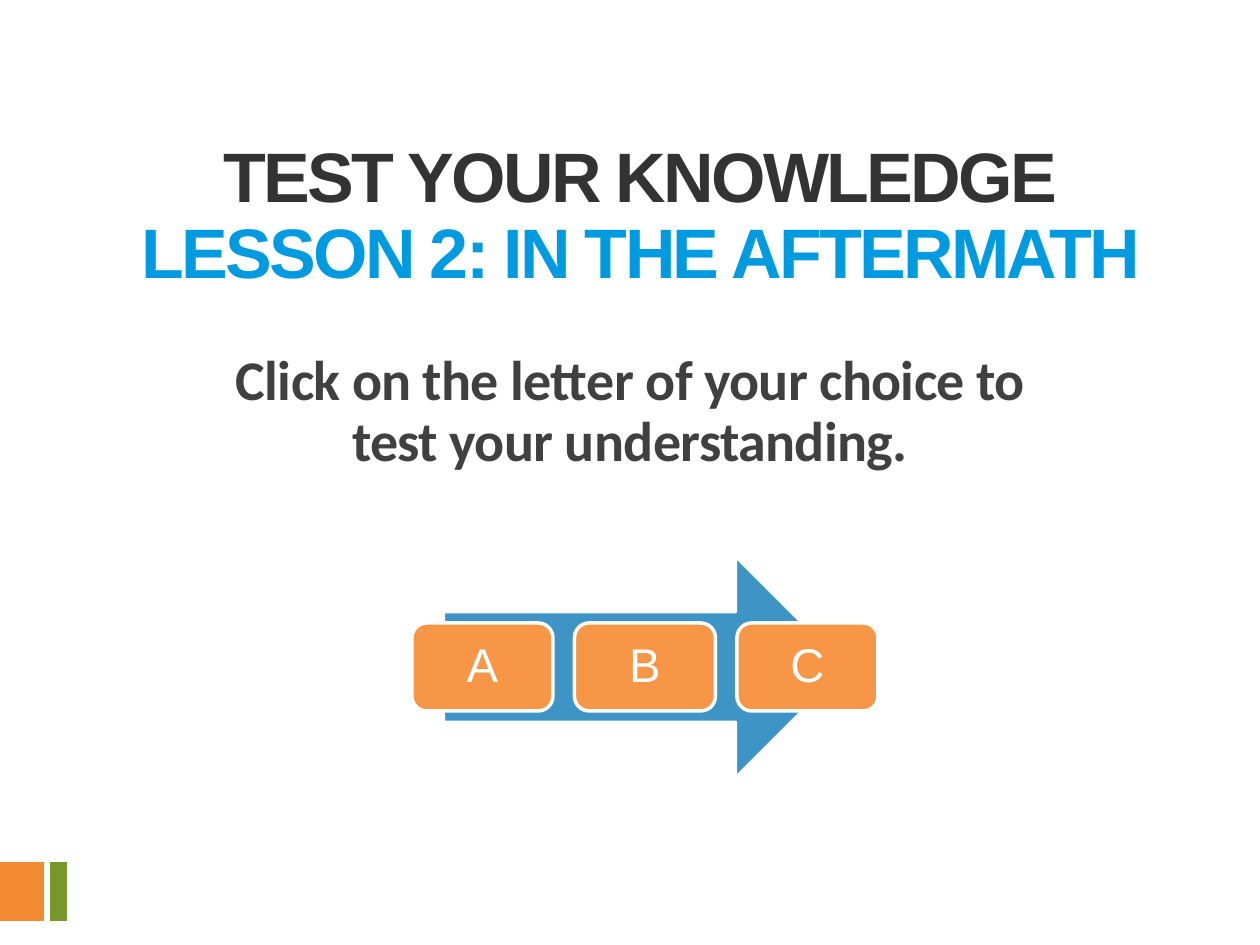
import pptx
import pptx.util
import pptx.dml.color
import pptx.enum.shapes
import pptx.enum.text

RGBColor = pptx.dml.color.RGBColor
Shape = pptx.enum.shapes.MSO_SHAPE
Anchor = pptx.enum.text.MSO_ANCHOR

EMU_PER_PX = 914400 / 126

WHITE = RGBColor(0xFF, 0xFF, 0xFF)
ORANGE = RGBColor(0xF3, 0x8A, 0x31)
GREEN = RGBColor(0x77, 0x97, 0x2B)
CHARCOAL = RGBColor(0x33, 0x33, 0x33)
GRAY = RGBColor(0x40, 0x40, 0x40)
BRIGHT_BLUE = RGBColor(0x00, 0x9A, 0xE1)
ARROW_BLUE = RGBColor(0x3E, 0x94, 0xC4)
BUTTON_ORANGE = RGBColor(0xF7, 0x96, 0x46)


def px(length):
    return pptx.util.Emu(round(length * EMU_PER_PX))


def place(shape, box):
    shape.left, shape.top, shape.width, shape.height = map(px, box)


def write_text(shape, lines, size, font="Arial", bold=False, spacing=0,
               anchor=Anchor.TOP):
    """Write (text, colour) lines as one centred paragraph with line breaks."""
    frame = shape.text_frame
    frame.word_wrap = True
    frame.auto_size = pptx.enum.text.MSO_AUTO_SIZE.NONE
    frame.vertical_anchor = anchor
    paragraph = frame.paragraphs[0]
    paragraph.alignment = pptx.enum.text.PP_ALIGN.CENTER
    paragraph.line_spacing = 0.9
    for index, (text, color) in enumerate(lines):
        if index:
            paragraph.add_line_break()
        run = paragraph.add_run()
        run.text = text
        run.font.name = font
        run.font.size = pptx.util.Pt(size)
        run.font.bold = bold
        run.font.color.rgb = color
        if spacing:
            run._r.get_or_add_rPr().set("spc", str(round(spacing * 100)))


def add_filled(shapes, kind, box, fill, line_width=0):
    shape = shapes.add_shape(kind, *map(px, box))
    shape.shadow.inherit = False
    shape.fill.solid()
    shape.fill.fore_color.rgb = fill
    if line_width:
        shape.line.color.rgb = WHITE
        shape.line.width = pptx.util.Pt(line_width)
    else:
        shape.line.fill.background()
    return shape


def add_corner_bars(slide, box):
    left, top, width, height = box
    green_width = 17
    orange_width = width - green_width - 6
    add_filled(slide.shapes, Shape.RECTANGLE,
               (left, top, orange_width, height), ORANGE)
    add_filled(slide.shapes, Shape.RECTANGLE,
               (left + width - green_width, top, green_width, height), GREEN)


def add_title(slide, box):
    title = slide.shapes.title
    place(title, box)
    write_text(title, [("TEST YOUR KNOWLEDGE", CHARCOAL),
                       ("LESSON 2: IN THE AFTERMATH", BRIGHT_BLUE)],
               size=40, bold=True, spacing=-1.5)


def add_instruction(slide, box):
    text_box = slide.shapes.add_textbox(*map(px, box))
    write_text(text_box,
               [("Click on the letter of your choice to test your understanding.", GRAY)],
               size=32, font="Calibri", bold=True, spacing=-0.4)


def add_answer_arrow(slide, box, letters="ABC"):
    left, top, width, height = box
    shapes = slide.shapes.add_group_shape().shapes
    arrow_inset = 32
    add_filled(shapes, Shape.RIGHT_ARROW,
               (left + arrow_inset, top, width - 2 * arrow_inset, height),
               ARROW_BLUE, line_width=1.5)
    button_width, button_height = 141, 88
    pitch = (width - button_width) / (len(letters) - 1)
    button_top = top + (height - button_height) / 2
    for index, letter in enumerate(letters):
        button = add_filled(
            shapes, Shape.ROUNDED_RECTANGLE,
            (left + index * pitch, button_top, button_width, button_height),
            BUTTON_ORANGE, line_width=2)
        write_text(button, [(letter, WHITE)], size=27, anchor=Anchor.MIDDLE)


def main():
    presentation = pptx.Presentation()
    presentation.slide_width = px(1260)
    presentation.slide_height = px(945)
    slide = presentation.slides.add_slide(presentation.slide_layouts[5])
    add_corner_bars(slide, (0, 862, 67, 59))
    add_title(slide, (105, 136, 1071, 336))
    add_answer_arrow(slide, (412, 557, 466, 220))
    add_instruction(slide, (189, 346, 882, 147))
    presentation.save("out.pptx")


if __name__ == "__main__":
    main()
